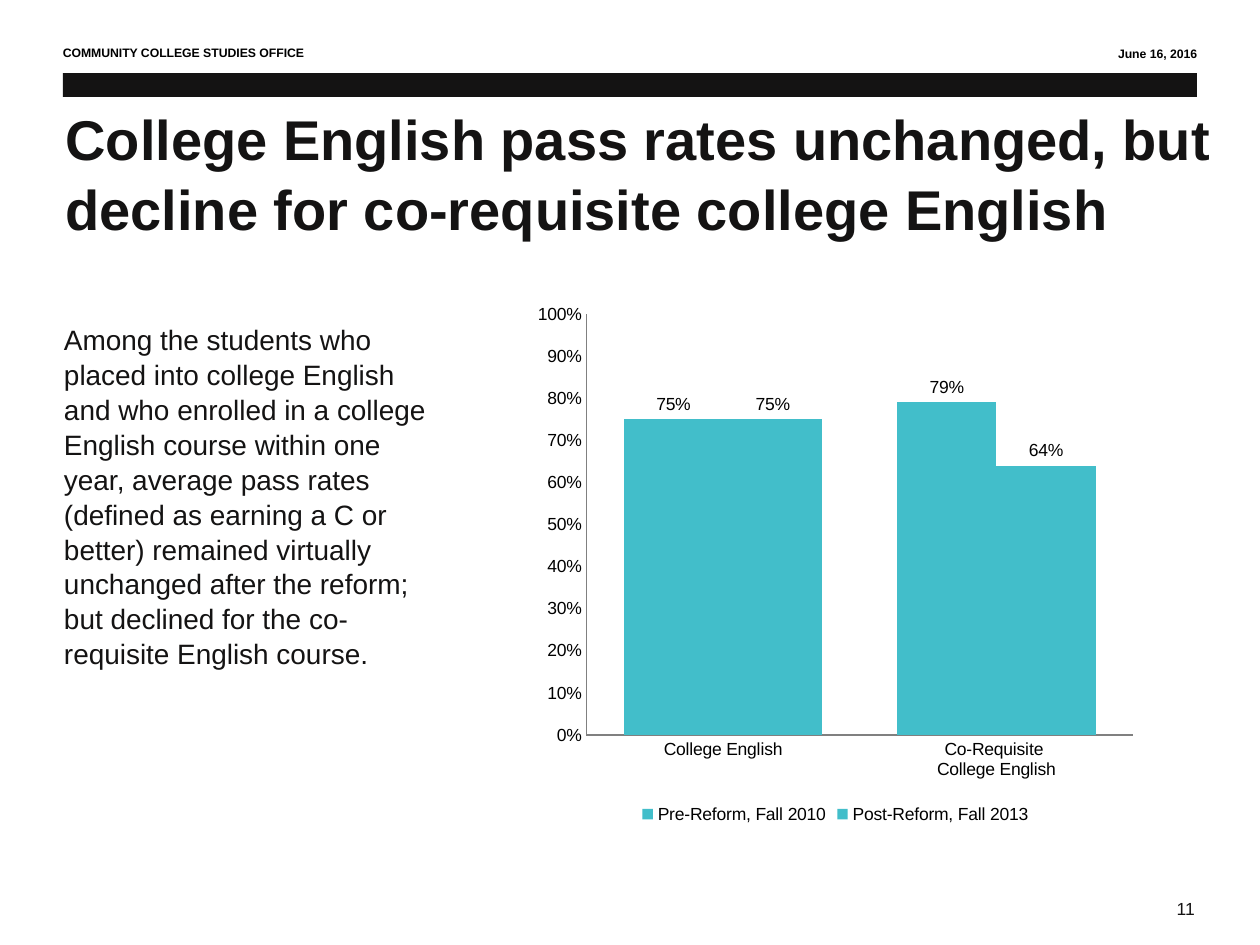
from dataclasses import dataclass

from pptx import Presentation
from pptx.chart.data import CategoryChartData
from pptx.dml.color import RGBColor
from pptx.enum import chart as charts, shapes, text
from pptx.util import Inches, Pt


@dataclass(frozen=True)
class Theme:
    font: str = "Arial"
    ink: RGBColor = RGBColor(0x14, 0x13, 0x13)
    black: RGBColor = RGBColor(0, 0, 0)
    axis: RGBColor = RGBColor(0x80, 0x80, 0x80)
    teal: RGBColor = RGBColor(0x42, 0xBE, 0xCA)
    title: int = 32
    body: int = 16
    small: int = 10
    header: int = 7
    line_spacing: float = 1.04


theme = Theme()


def style_font(font, size, color, bold=False):
    font.name, font.size, font.bold = theme.font, Pt(size), bold
    font.color.rgb = color


def add_text(slide, box, words, size, color, bold=False):
    """Add a wrapping text box and return its paragraph."""
    frame = slide.shapes.add_textbox(*map(Inches, box)).text_frame
    frame.word_wrap = True
    paragraph = frame.paragraphs[0]
    paragraph.text = words
    style_font(paragraph.font, size, color, bold)
    return paragraph


prs = Presentation()
prs.slide_width, prs.slide_height = Inches(10), Inches(7.5)
slide = prs.slides.add_slide(prs.slide_layouts[5])

# Header and page number
add_text(slide, (9.24, 7.08, 0.46, 0.27), "11", theme.small, theme.ink)
rule = slide.shapes.add_shape(shapes.MSO_SHAPE.RECTANGLE, Inches(0.5), Inches(0.58), Inches(9), Inches(0.19))
rule.shadow.inherit = False
rule.fill.solid()
rule.fill.fore_color.rgb = theme.ink
rule.line.fill.background()
date = add_text(slide, (6.42, 0.32, 3.18, 0.22), "June 16, 2016", theme.header, theme.black, True)
date.alignment = text.PP_ALIGN.RIGHT
add_text(slide, (0.4, 0.31, 3.56, 0.22), "COMMUNITY COLLEGE STUDIES OFFICE", theme.header, theme.black, True)

# Title
title = slide.shapes.title
title.left, title.top, title.width, title.height = map(Inches, (0.42, 0.4, 9.5, 1.92))
title.text_frame.text = "College English pass rates unchanged, but decline for co-requisite college English"
title.text_frame.vertical_anchor = text.MSO_ANCHOR.MIDDLE
title.text_frame.auto_size = text.MSO_AUTO_SIZE.NONE
heading = title.text_frame.paragraphs[0]
heading.alignment = text.PP_ALIGN.LEFT
heading.line_spacing = theme.line_spacing
style_font(heading.font, theme.title, theme.ink, True)

# Finding
finding = add_text(
    slide, (0.41, 2.5, 3.17, 4.41),
    "Among the students who placed into college English and who enrolled in a college "
    "English course within one year, average pass rates (defined as earning a C or better) "
    "remained virtually unchanged after the reform; but declined for the co-requisite "
    "English course.",
    theme.body, theme.ink)
finding.line_spacing = theme.line_spacing

# Pass rates
rates = CategoryChartData(number_format="0%")
rates.categories = ["College English", "Co-Requisite \nCollege English"]
rates.add_series("Pre-Reform, Fall 2010", (0.75, 0.79))
rates.add_series("Post-Reform, Fall 2013", (0.75, 0.64))
chart = slide.shapes.add_chart(
    charts.XL_CHART_TYPE.COLUMN_CLUSTERED,
    Inches(4.17), Inches(2.33), Inches(4.92), Inches(4.25), rates).chart
style_font(chart.font, theme.small, theme.black)
chart.has_title = False
chart.has_legend = True
chart.legend.position = charts.XL_LEGEND_POSITION.BOTTOM
chart.legend.include_in_layout = False

for axis in (chart.category_axis, chart.value_axis):
    axis.major_tick_mark = axis.minor_tick_mark = charts.XL_TICK_MARK.NONE
    axis.has_major_gridlines = False
    axis.format.line.color.rgb = theme.axis
    axis.format.line.width = Pt(0.75)
percent = chart.value_axis
percent.minimum_scale, percent.maximum_scale, percent.major_unit = 0, 1, 0.1
percent.tick_labels.number_format = "0%"
percent.tick_labels.number_format_is_linked = False

columns = chart.plots[0]
columns.gap_width, columns.overlap = 75, 0
columns.vary_by_categories = False
for series in columns.series:
    series.format.fill.solid()
    series.format.fill.fore_color.rgb = theme.teal
    labels = series.data_labels
    labels.show_value = True
    labels.number_format, labels.number_format_is_linked = "0%", False
    labels.position = charts.XL_LABEL_POSITION.OUTSIDE_END

prs.save("out.pptx")
